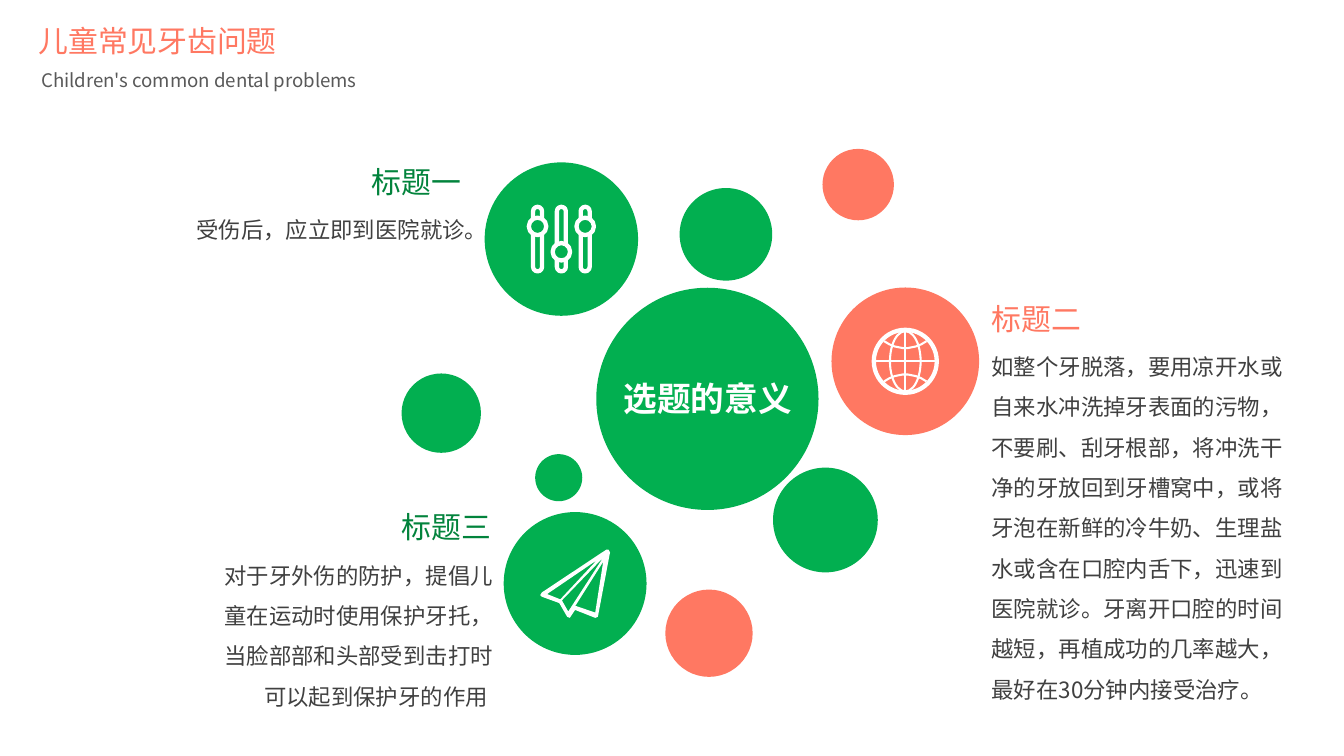
"""Build a slide on children's dental problems with a cluster of circles."""
from dataclasses import dataclass

from lxml.etree import SubElement
from pptx import Presentation
from pptx.dml.color import RGBColor as Color
from pptx.enum.shapes import MSO_CONNECTOR as Link, MSO_SHAPE as Form
from pptx.enum.text import MSO_AUTO_SIZE as Fit, PP_ALIGN as Align
from pptx.oxml.ns import qn
from pptx.util import Cm, Pt


@dataclass(frozen=True)
class Theme:
    green: Color = Color.from_string("02AF50")
    dark: Color = Color.from_string("02833C")
    coral: Color = Color.from_string("FF7862")
    white: Color = Color.from_string("FFFFFF")
    gray: Color = Color.from_string("595959")
    ink: Color = Color.from_string("404040")
    font: str = "Noto Sans CJK SC"
    note: Pt = Pt(10)
    body: Pt = Pt(12)
    head: Pt = Pt(16)
    core: Pt = Pt(18)
    thick: Pt = Pt(2.3)
    thin: Pt = Pt(1.1)


def paint(shape, fill=None, edge=None, width=None):
    shape.shadow.inherit = False
    if fill is None:
        shape.fill.background()
    else:
        shape.fill.solid()
        shape.fill.fore_color.rgb = fill
    if edge is None:
        shape.line.fill.background()
    else:
        shape.line.color.rgb = edge
        shape.line.width = width


def place(form, mid_x, mid_y, wide, high, **look):
    box = (mid_x - wide / 2, mid_y - high / 2, wide, high)
    shape = shapes.add_shape(form, *map(Cm, box))
    paint(shape, **look)
    return shape


theme = Theme()
deck = Presentation()
deck.slide_width, deck.slide_height = Cm(25.4), Cm(14.29)
shapes = deck.slides.add_slide(deck.slide_layouts[6]).shapes

circles = [
    (8.34, 7.81, 1.5, theme.green),
    (13.37, 7.54, 4.2, theme.green),
    (15.6, 9.83, 1.98, theme.green),
    (16.22, 3.49, 1.35, theme.coral),
    (10.56, 9.03, 0.89, theme.green),
    (13.72, 4.43, 1.75, theme.green),
    (13.4, 11.97, 1.65, theme.coral),
    (17.11, 6.83, 2.79, theme.coral),
    (10.61, 4.52, 2.9, theme.green),
    (10.87, 11.03, 2.7, theme.green),
]
for x, y, size, tone in circles:
    place(Form.OVAL, x, y, size, size, fill=tone)

thick = {"edge": theme.white, "width": theme.thick}
thin = {"edge": theme.white, "width": theme.thin}

for x, y in [(10.16, 4.28), (10.61, 4.76), (11.06, 4.28)]:
    rod = place(Form.ROUNDED_RECTANGLE, x, 4.52, 0.17, 1.22, **thick)
    rod.adjustments[0] = 0.5
    place(Form.OVAL, x, y, 0.33, 0.33, fill=theme.green, **thick)

place(Form.OVAL, 17.11, 6.83, 1.19, 1.19, **thick)
place(Form.OVAL, 17.11, 6.83, 0.58, 1.14, **thin)
for dx, dy in [(0.58, 0), (0, 0.58)]:
    ends = (17.11 - dx, 6.83 - dy, 17.11 + dx, 6.83 + dy)
    line = shapes.add_connector(Link.STRAIGHT, *map(Cm, ends))
    line.line.color.rgb = theme.white
    line.line.width = theme.thin
    SubElement(line._element.spPr, qn("a:effectLst"))
for side in (-1, 1):
    curve = [(1711 + dx, 683 + side * (25 + 13 * (dx / 40) ** 2))
             for dx in range(-40, 41, 5)]
    pen = shapes.build_freeform(*curve[0], scale=Cm(0.01))
    pen.add_line_segments(curve[1:], close=False)
    paint(pen.convert_to_shape(), **thin)

plane = [
    [(1150, 1039), (1146, 1039), (1024, 1120), (1021, 1125), (1024, 1128),
     (1057, 1140), (1072, 1166), (1077, 1168), (1087, 1153), (1125, 1168),
     (1130, 1166), (1153, 1044)],
    [(1125, 1158), (1090, 1146), (1087, 1146), (1140, 1062)],
    [(1062, 1135), (1140, 1054), (1074, 1156)],
    [(1034, 1123), (1128, 1059), (1059, 1133)],
]
pen = shapes.build_freeform(*plane[0][0], scale=Cm(0.01))
for ring in plane:
    pen.move_to(*ring[0])
    pen.add_line_segments(ring[1:], close=True)
paint(pen.convert_to_shape(), fill=theme.white)

styles = {
    "note": {"size": theme.note, "bold": False},
    "body": {"size": theme.body, "bold": False},
    "head": {"size": theme.head, "bold": False},
    "core": {"size": theme.core, "bold": True},
}
left, right, center = Align.LEFT, Align.RIGHT, Align.CENTER
texts = [
    (0.53, 0.97, 6.83, 0.81, "note", theme.gray, left,
     "Children's common dental problems"),
    (0.48, 0.3, 5.08, 0.94, "head", theme.coral, left, "儿童常见牙齿问题"),
    (3.1, 3.71, 5.94, 1.7, "body", theme.ink, right,
     "受伤后，应立即到医院就诊。"),
    (6.73, 2.97, 2.24, 0.94, "head", theme.dark, right, "标题一"),
    (3.63, 10.24, 5.94, 3.25, "body", theme.ink, right,
     "对于牙外伤的防护，提倡儿童在运动时使用保护牙托，"
     "当脸部部和头部受到击打时可以起到保护牙的作用 "),
    (7.29, 9.5, 2.24, 0.94, "head", theme.dark, right, "标题三"),
    (18.49, 6.3, 6.3, 7.09, "body", theme.ink, left,
     "如整个牙脱落，要用凉开水或自来水冲洗掉牙表面的污物，"
     "不要刷、刮牙根部，将冲洗干净的牙放回到牙槽窝中，"
     "或将牙泡在新鲜的冷牛奶、生理盐水或含在口腔内舌下，"
     "迅速到医院就诊。牙离开口腔的时间越短，再植成功的几率越大，"
     "最好在30分钟内接受治疗。"),
    (18.49, 5.56, 2.24, 0.94, "head", theme.coral, left, "标题二"),
    (11.51, 7.01, 3.73, 1.02, "core", theme.white, center, "选题的意义"),
]
for x, y, wide, high, style, tone, align, words in texts:
    frame = shapes.add_textbox(*map(Cm, (x, y, wide, high))).text_frame
    flows = style in ("note", "body")
    frame.word_wrap = flows
    frame.auto_size = Fit.SHAPE_TO_FIT_TEXT
    para = frame.paragraphs[0]
    para.alignment = align
    if flows:
        para.line_spacing = 1.5
    run = para.add_run()
    run.text = words
    for key, value in {"name": theme.font, **styles[style]}.items():
        setattr(run.font, key, value)
    run.font.color.rgb = tone
    SubElement(run._r.rPr, qn("a:ea"), typeface=theme.font)

deck.save("out.pptx")
